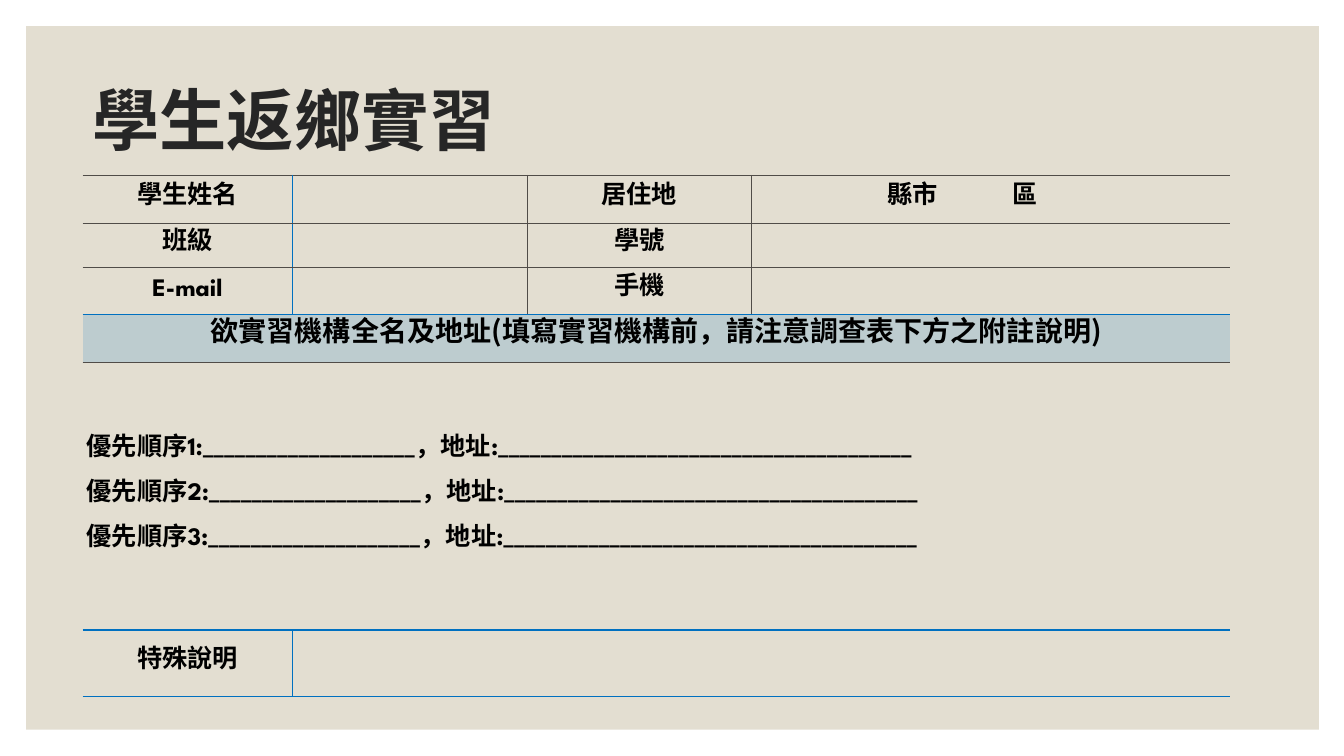
from pptx import Presentation
from pptx.dml.color import RGBColor
from pptx.enum.shapes import MSO_SHAPE
from pptx.enum.text import MSO_ANCHOR, PP_ALIGN
from pptx.oxml import parse_xml
from pptx.oxml.ns import nsdecls, qn
from pptx.util import Inches, Pt
from lxml.etree import SubElement

PAPER = RGBColor(0xE3, 0xDE, 0xD1)
TITLE_INK = RGBColor(0x26, 0x26, 0x26)
BLACK = RGBColor(0, 0, 0)
BANNER = RGBColor(0xBD, 0xCC, 0xCF)
BLUE = RGBColor(0x00, 0x70, 0xC0)
DARK = RGBColor(0x50, 0x4C, 0x48)
LATIN = "League Spartan"
CJK = "Noto Sans CJK SC"
NO_GRID_STYLE = "{2D5ABB26-0587-4C30-8999-92F81FD0307C}"

COLUMN_WIDTHS = [2.08, 2.33, 2.22, 4.75]
ROW_HEIGHTS = [0.48, 0.43, 0.47, 0.48, 2.65, 0.66]
LABELS = [("學生姓名", "居住地"), ("班級", "學號"), ("E-mail", "手機")]
NOTICE = "欲實習機構全名及地址(填寫實習機構前，請注意調查表下方之附註說明)"
ROW_RULES = [DARK, DARK, DARK, BLUE, DARK, BLUE, BLUE]
COLUMN_RULES = [None, BLUE, DARK, DARK, None]


def add_bold_run(paragraph, text, size, font=LATIN, color=BLACK):
    """Add one bold run with Latin and East Asian fonts."""
    run = paragraph.add_run()
    run.text = text
    run.font.size = Pt(size)
    run.font.bold = True
    run.font.name = font
    run.font.color.rgb = color
    SubElement(run.font._element, qn("a:ea"), typeface=CJK)


def add_paper(slide):
    """Draw the beige sheet inside the white margin."""
    paper = slide.shapes.add_shape(
        MSO_SHAPE.RECTANGLE, Inches(0.26), Inches(0.26), Inches(12.82), Inches(6.98))
    paper.shadow.inherit = False
    paper.fill.solid()
    paper.fill.fore_color.rgb = PAPER
    paper.line.fill.background()


def add_title(slide, text):
    """Add the slide heading."""
    frame = slide.shapes.add_textbox(
        Inches(0.82), Inches(0.48), Inches(11), Inches(1.5)).text_frame
    frame.word_wrap = True
    frame.vertical_anchor = MSO_ANCHOR.MIDDLE
    heading = frame.paragraphs[0]
    heading.line_spacing = 0.9
    add_bold_run(heading, text, 48, CJK, TITLE_INK)


def write_cell(cell, lines, size=18, font=LATIN, align=PP_ALIGN.CENTER):
    """Fill a cell with lines that are one line height apart."""
    for index, line in enumerate(lines):
        frame = cell.text_frame
        paragraph = frame.add_paragraph() if index else frame.paragraphs[0]
        paragraph.alignment = align
        paragraph.line_spacing = Pt(16)
        if index < len(lines) - 1:
            paragraph.space_after = Pt(16)
        add_bold_run(paragraph, line, size, font)


def set_tabs(paragraph, stops):
    """Set left tab stops at the given inches."""
    tabs = SubElement(paragraph._p.get_or_add_pPr(), qn("a:tabLst"))
    for stop in stops:
        SubElement(tabs, qn("a:tab"), pos=str(Inches(stop)), algn="l")


def set_borders(cell, rules):
    """Rule the left, right, top and bottom sides of a cell."""
    properties = cell._tc.get_or_add_tcPr()
    for index, (side, color) in enumerate(zip("LRTB", rules)):
        paint = (f'<a:solidFill><a:srgbClr val="{color}"/></a:solidFill>'
                 if color else "<a:noFill/>")
        properties.insert(index, parse_xml(
            f'<a:ln{side} {nsdecls("a")} w="{Pt(1)}">{paint}</a:ln{side}>'))


def format_grid(form):
    """Set margins, fills and rules of every cell."""
    for row in range(len(ROW_HEIGHTS)):
        for column in range(len(COLUMN_WIDTHS)):
            cell = form.cell(row, column)
            cell.margin_left = cell.margin_right = Inches(0.04)
            cell.margin_top = cell.margin_bottom = 0
            cell.vertical_anchor = MSO_ANCHOR.MIDDLE
            if row == 3:
                cell.fill.solid()
                cell.fill.fore_color.rgb = BANNER
            else:
                cell.fill.background()
            if row < 3:
                sides = COLUMN_RULES[column:column + 2]
            elif row == 5:
                sides = [BLUE if column == 1 else None, BLUE if column == 0 else None]
            else:
                sides = [None, None]
            set_borders(cell, sides + ROW_RULES[row:row + 2])


def add_form(slide):
    """Add the internship survey table."""
    frame = slide.shapes.add_table(
        len(ROW_HEIGHTS), len(COLUMN_WIDTHS), Inches(0.82), Inches(1.74),
        Inches(sum(COLUMN_WIDTHS)), Inches(sum(ROW_HEIGHTS)))
    form = frame.table
    form.first_row = form.horz_banding = False
    form._tbl.tblPr.find(qn("a:tableStyleId")).text = NO_GRID_STYLE
    for column, width in zip(form.columns, COLUMN_WIDTHS):
        column.width = Inches(width)
    for row, height in zip(form.rows, ROW_HEIGHTS):
        row.height = Inches(height)
    format_grid(form)
    for row, first in ((3, 0), (4, 0), (5, 1)):
        form.cell(row, first).merge(form.cell(row, 3))

    for row, (left_label, right_label) in enumerate(LABELS):
        write_cell(form.cell(row, 0), [left_label])
        write_cell(form.cell(row, 2), [right_label])
    residence = form.cell(0, 3)
    write_cell(residence, ["\t縣市\t區"], align=PP_ALIGN.LEFT)
    set_tabs(residence.text_frame.paragraphs[0], [1.31, 2.55])
    write_cell(form.cell(3, 0), [NOTICE], 20, CJK)
    choices = [f"優先順序{rank}:{'_' * 20}，地址:{'_' * 39}" for rank in (1, 2, 3)]
    write_cell(form.cell(4, 0), choices, align=PP_ALIGN.LEFT)
    write_cell(form.cell(5, 0), ["特殊說明"])


def main():
    """Build and save the slide."""
    deck = Presentation()
    deck.slide_width = Inches(13.33)
    deck.slide_height = Inches(7.5)
    slide = deck.slides.add_slide(deck.slide_layouts[6])
    add_paper(slide)
    add_title(slide, "學生返鄉實習")
    add_form(slide)
    deck.save("out.pptx")


if __name__ == "__main__":
    main()
